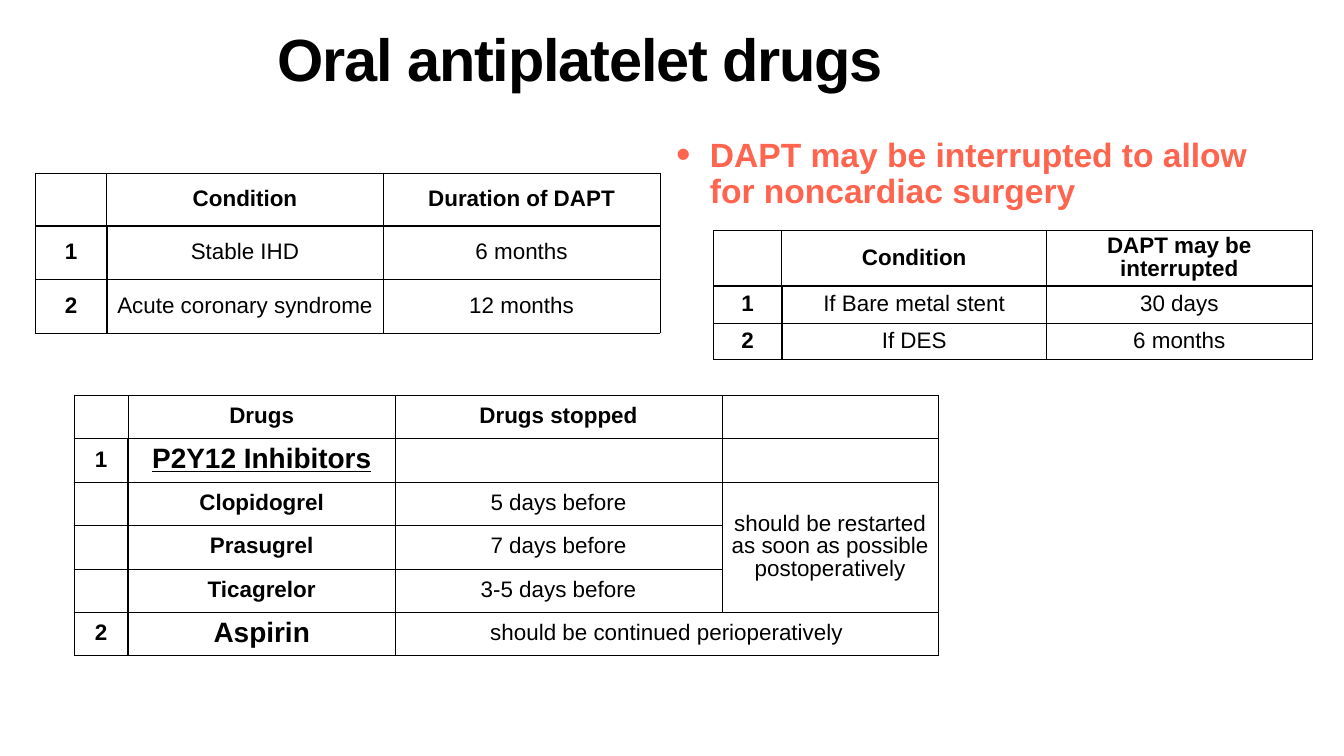
"""Build the oral antiplatelet drugs slide with its three tables."""
from lxml import etree
from pptx import Presentation
from pptx.dml.color import RGBColor
from pptx.enum.text import MSO_ANCHOR, MSO_AUTO_SIZE, PP_ALIGN
from pptx.oxml.ns import qn
from pptx.util import Cm, Pt

LEFT, CENTER = PP_ALIGN.LEFT, PP_ALIGN.CENTER
TOP, MIDDLE = MSO_ANCHOR.TOP, MSO_ANCHOR.MIDDLE
NO_AUTOFIT = MSO_AUTO_SIZE.NONE

COLORS = {"ink": "000000", "accent": "FF644E"}
FONT = "Arial"
INSET = Cm(0.15)
MARGINS = ("margin_left", "margin_top", "margin_right", "margin_bottom")
THIN, THICK = Pt(1), Pt(3)

TITLE = "Oral antiplatelet drugs"
TITLE_BOX = (13.84, 1.65, 61.04, 3.99)
BULLET = "DAPT may be interrupted to allow for noncardiac surgery"
BULLET_BOX = (33.93, 6.83, 30.4, 6.63)
BULLET_INDENT = Cm(1.7)

TABLES = [
    {
        "at": (1.8, 8.71),
        "columns": (3.58, 13.94, 13.94),
        "heights": (2.69, 2.69, 2.69),
        "bold_columns": 1,
        "merges": [],
        "rows": [
            ("", "Condition", "Duration of DAPT"),
            ("1", "Stable IHD", "6 months"),
            ("2", "Acute coronary syndrome", "12 months"),
        ],
    },
    {
        "at": (35.97, 11.61),
        "columns": (3.43, 13.36, 13.36),
        "heights": (2.82, 1.85, 1.85),
        "bold_columns": 1,
        "merges": [],
        "rows": [
            ("", "Condition", "DAPT may be interrupted"),
            ("1", "If Bare metal stent", "30 days"),
            ("2", "If DES", "6 months"),
        ],
    },
    {
        "at": (3.73, 19.91),
        "columns": (2.74, 13.44, 16.48, 10.9),
        "heights": (2.19,) * 6,
        "bold_columns": 2,
        "merges": [((2, 3), (4, 3)), ((5, 2), (5, 3))],
        "rows": [
            ("", "Drugs", "Drugs stopped", ""),
            ("1", "P2Y12 Inhibitors", "", ""),
            ("", "Clopidogrel", "5 days before",
             "should be restarted as soon as possible postoperatively"),
            ("", "Prasugrel", "7 days before", ""),
            ("", "Ticagrelor", "3-5 days before", ""),
            ("2", "Aspirin", "should be continued perioperatively", ""),
        ],
    },
]
EMPHASIS = {
    "P2Y12 Inhibitors": {"size": Pt(40), "underline": True},
    "Aspirin": {"size": Pt(40)},
}


def set_values(target, values):
    for name, value in values.items():
        setattr(target, name, value)


def write(para, text, color, spacing, alignment, **font_values):
    set_values(para, {"alignment": alignment, "line_spacing": spacing, "space_before": Pt(0)})
    span = para.add_run()
    span.text = text
    set_values(span.font, {"name": FONT, **font_values})
    span.font.color.rgb = RGBColor.from_string(COLORS[color])
    return span


def prepare_box(box, bounds):
    set_values(box, dict(zip(("left", "top", "width", "height"), map(Cm, bounds))))
    frame = box.text_frame
    set_values(frame, {"word_wrap": True, "auto_size": NO_AUTOFIT, "vertical_anchor": TOP})
    set_values(frame, dict.fromkeys(MARGINS, INSET))
    return frame.paragraphs[0]


def add_borders(cell, right, bottom):
    properties = cell._tc.get_or_add_tcPr()
    widths = {"a:lnL": THIN, "a:lnR": right, "a:lnT": THIN, "a:lnB": bottom}
    for position, (tag, width) in enumerate(widths.items()):
        line = etree.Element(qn(tag), w=str(width))
        fill = etree.SubElement(line, qn("a:solidFill"))
        etree.SubElement(fill, qn("a:srgbClr"), val=COLORS["ink"])
        properties.insert(position, line)


def add_grid(slide, grid):
    columns, heights, rows = grid["columns"], grid["heights"], grid["rows"]
    bounds = (*grid["at"], sum(columns), sum(heights))
    table = slide.shapes.add_table(len(rows), len(columns), *map(Cm, bounds)).table
    set_values(table, {"first_row": False, "horz_banding": False})
    for column, width in zip(table.columns, columns):
        column.width = Cm(width)
    for row, height in zip(table.rows, heights):
        row.height = Cm(height)
    for start, end in grid["merges"]:
        table.cell(*start).merge(table.cell(*end))
    for row_index, row in enumerate(rows):
        for column_index, text in enumerate(row):
            cell = table.cell(row_index, column_index)
            header = row_index == 0
            set_values(cell, {"vertical_anchor": MIDDLE, **dict.fromkeys(MARGINS, INSET)})
            cell.fill.background()
            add_borders(
                cell,
                right=THICK if column_index == 0 and not header else THIN,
                bottom=THICK if header else THIN,
            )
            if text:
                bold = header or column_index < grid["bold_columns"]
                style = {"size": Pt(32), "bold": bold, **EMPHASIS.get(text, {})}
                write(cell.text_frame.paragraphs[0], text, "ink", 0.9, CENTER, **style)


def main():
    deck = Presentation()
    set_values(deck, {"slide_width": Cm(67.74), "slide_height": Cm(38.1)})
    slide = deck.slides.add_slide(deck.slide_layouts[1])

    para = prepare_box(slide.shapes.title, TITLE_BOX)
    span = write(para, TITLE, "ink", 0.8, LEFT, size=Pt(85), bold=True)
    span.font._element.set("spc", "-170")

    para = prepare_box(slide.placeholders[1], BULLET_BOX)
    write(para, BULLET, "accent", 0.9, LEFT, size=Pt(48), bold=True)
    properties = para._p.get_or_add_pPr()
    properties.set("marL", str(BULLET_INDENT))
    properties.set("indent", str(-BULLET_INDENT))
    etree.SubElement(properties, qn("a:buSzPct"), val="123000")
    etree.SubElement(properties, qn("a:buChar"), char="•")

    for grid in TABLES:
        add_grid(slide, grid)
    deck.save("out.pptx")


if __name__ == "__main__":
    main()
